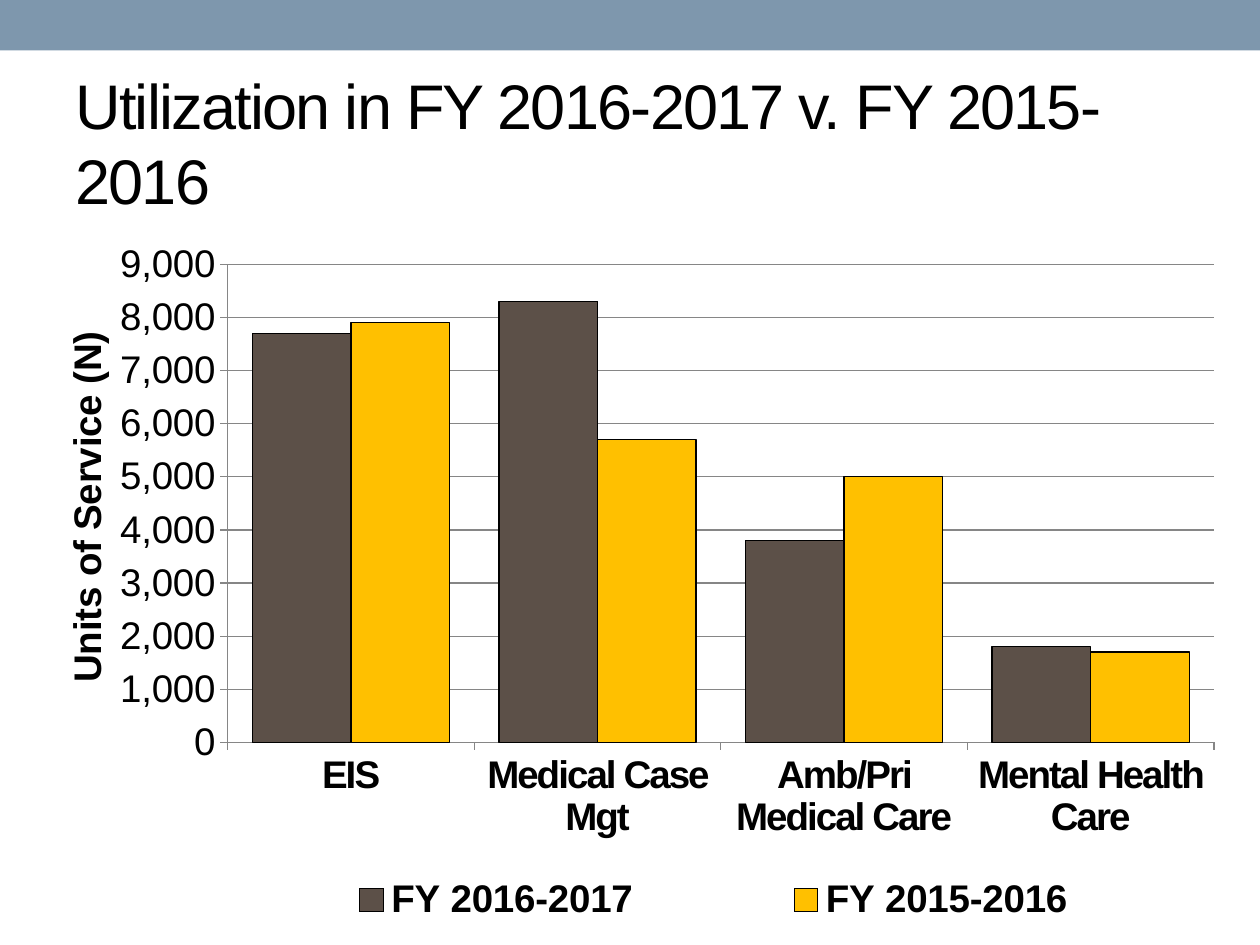
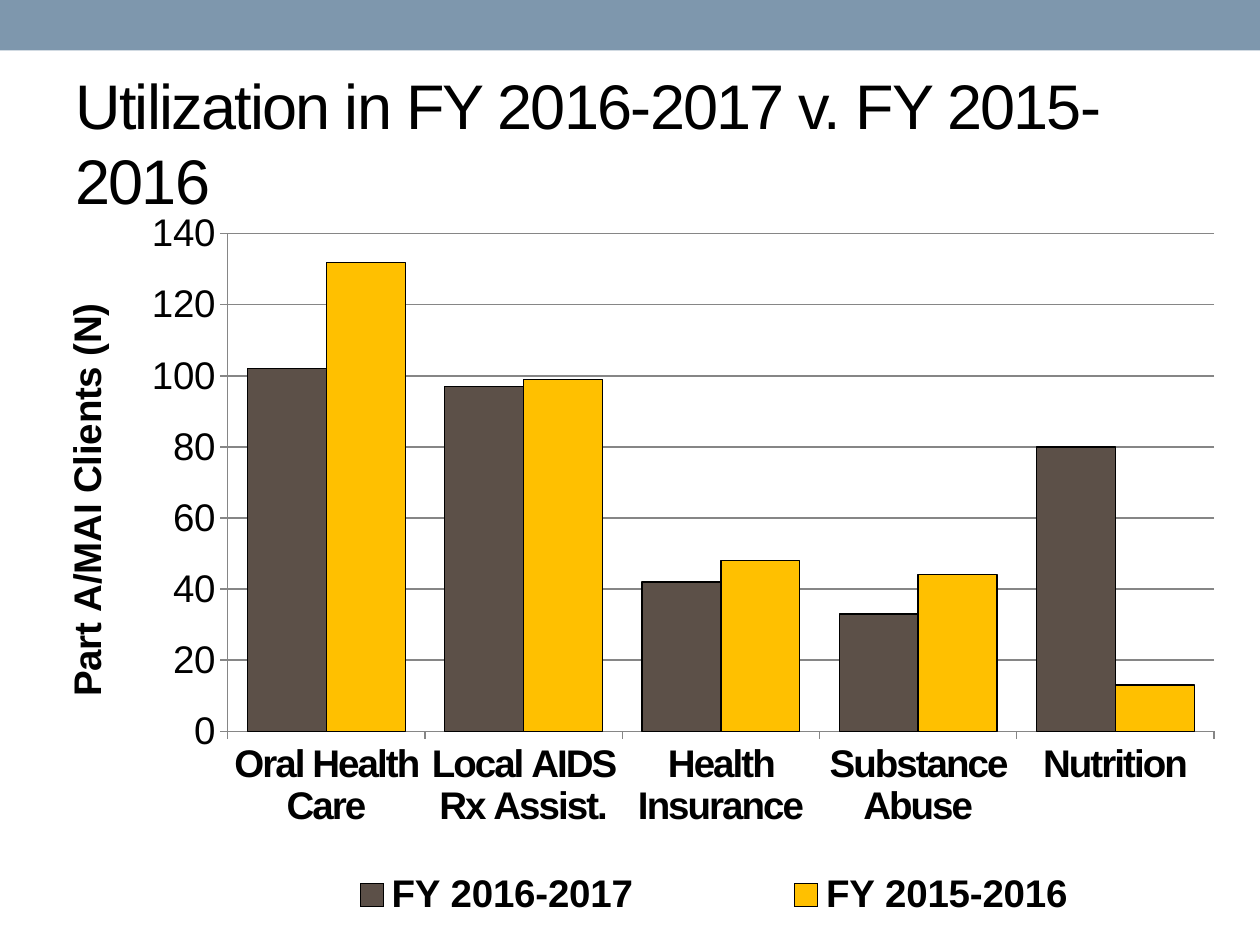
from dataclasses import dataclass

from lxml.etree import SubElement
from pptx import Presentation
from pptx.chart.data import CategoryChartData
from pptx.dml.color import RGBColor
from pptx.enum.chart import XL_CHART_TYPE as ChartType
from pptx.enum.chart import XL_LEGEND_POSITION as LegendPosition
from pptx.enum.chart import XL_TICK_MARK as TickMark
from pptx.enum.shapes import MSO_SHAPE as Preset
from pptx.enum.text import MSO_ANCHOR as Anchor
from pptx.oxml.ns import qn
from pptx.util import Pt


@dataclass(frozen=True)
class Theme:
    """Colours, font and type sizes that the slides share."""

    band: RGBColor = RGBColor(0x7E, 0x97, 0xAD)
    ink: RGBColor = RGBColor(0, 0, 0)
    grid: RGBColor = RGBColor(0x86, 0x86, 0x86)
    current_year: RGBColor = RGBColor(0x5C, 0x50, 0x48)
    previous_year: RGBColor = RGBColor(0xFF, 0xC0, 0x00)
    font: str = "Arial"
    title_size: float = 36
    chart_size: float = 22
    line_width: float = 0.75
    tracking: str = "-100"


@dataclass(frozen=True)
class Box:
    """A frame in points, or in fractions of a chart."""

    left: float
    top: float
    width: float
    height: float

    def points(self) -> tuple:
        """Return the four lengths as Pt values."""
        return Pt(self.left), Pt(self.top), Pt(self.width), Pt(self.height)


@dataclass(frozen=True)
class Utilization:
    """The figures of one slide, by service, for the two years."""

    frame: Box
    axis_label: str
    maximum: float
    step: float
    services: tuple
    current: tuple
    previous: tuple


THEME = Theme()
PAGE_WIDTH, PAGE_HEIGHT = 720, 540
BAND = Box(0, 0, PAGE_WIDTH, 28.8)
TITLE = Box(36, 42, 648, 78)
PLOT = Box(0.164, 0.033, 0.824, 0.69)
LEGEND = Box(0.15, 0.91, 0.84, 0.08)
AXIS_LABEL = (0.02, 0.12)
HEADING = "Utilization in FY 2016-2017 v. FY 2015-2016"

SLIDES = (
    Utilization(
        Box(18, 138, 684, 396), "Units of Service (N)", 9000, 1000,
        ("EIS", "Medical Case Mgt", "Amb/Pri Medical Care", "Mental Health Care"),
        (7700, 8300, 3800, 1800),
        (7900, 5700, 5000, 1700),
    ),
    Utilization(
        Box(18, 120, 684, 412), "Part A/MAI Clients (N)", 140, 20,
        ("Oral Health Care", "Local AIDS Rx Assist.", "Health Insurance",
         "Substance Abuse", "Nutrition"),
        (102, 97, 42, 33, 80),
        (132, 99, 48, 44, 13),
    ),
)


def style_font(font, size: float, bold: bool = False) -> None:
    """Give a font the shared face and ink."""
    font.name = THEME.font
    font.size = Pt(size)
    font.bold = bold
    font.color.rgb = THEME.ink


def style_line(line, color: RGBColor) -> None:
    """Give a line the shared width and a colour."""
    line.color.rgb = color
    line.width = Pt(THEME.line_width)


def place(element, index: int, **settings) -> None:
    """Fix the layout of a chart part by fractions of the chart."""
    for old in element.findall(qn("c:layout")):
        element.remove(old)
    layout = element.makeelement(qn("c:layout"))
    element.insert(index, layout)
    manual = SubElement(layout, qn("c:manualLayout"))
    for name, value in settings.items():
        SubElement(manual, qn(f"c:{name}")).set("val", str(value))


def place_box(element, index: int, box: Box, **target) -> None:
    """Fix both the position and the size of a chart part."""
    place(element, index, **target, xMode="edge", yMode="edge",
          x=box.left, y=box.top, w=box.width, h=box.height)


def add_band(page) -> None:
    """Draw the band across the top of the page."""
    band = page.shapes.add_shape(Preset.RECTANGLE, *BAND.points())
    band.shadow.inherit = False
    band.fill.solid()
    band.fill.fore_color.rgb = THEME.band
    band.line.fill.background()


def add_title(page) -> None:
    """Write the page title."""
    frame = page.shapes.add_textbox(*TITLE.points()).text_frame
    frame.word_wrap = True
    frame.vertical_anchor = Anchor.MIDDLE
    span = frame.paragraphs[0].add_run()
    span.text = HEADING
    style_font(span.font, THEME.title_size)
    span.font._element.set("spc", THEME.tracking)


def style_axes(chart, figures: Utilization) -> None:
    """Set the scale, labels and lines of both axes."""
    services, units = chart.category_axis, chart.value_axis
    for axis, bold in ((services, True), (units, False)):
        style_font(axis.tick_labels.font, THEME.chart_size, bold)
        style_line(axis.format.line, THEME.grid)
        axis.major_tick_mark = TickMark.OUTSIDE
        axis.minor_tick_mark = TickMark.NONE
    services.tick_labels.font._element.set("spc", THEME.tracking)
    units.minimum_scale = 0
    units.maximum_scale = figures.maximum
    units.major_unit = figures.step
    units.tick_labels.number_format = "#,##0"
    units.tick_labels.number_format_is_linked = False
    units.has_major_gridlines = True
    style_line(units.major_gridlines.format.line, THEME.grid)

    label = units.axis_title
    span = label.text_frame.paragraphs[0].add_run()
    span.text = figures.axis_label
    style_font(span.font, THEME.chart_size, True)
    body = label.text_frame._txBody.bodyPr
    body.set("rot", "-5400000")
    body.set("vert", "horz")
    left, top = AXIS_LABEL
    place(label._element, 1, xMode="edge", yMode="edge", x=left, y=top)


def add_utilization_chart(page, figures: Utilization) -> None:
    """Draw the two years side by side for each service."""
    data = CategoryChartData(number_format="#,##0")
    data.categories = figures.services
    data.add_series("FY 2016-2017", figures.current)
    data.add_series("FY 2015-2016", figures.previous)
    chart = page.shapes.add_chart(
        ChartType.COLUMN_CLUSTERED, *figures.frame.points(), data).chart
    style_font(chart.font, THEME.chart_size)
    chart.has_title = False

    plot = chart.plots[0]
    plot.gap_width = 50
    plot.overlap = 0
    plot.vary_by_categories = False
    for series, color in zip(plot.series, (THEME.current_year, THEME.previous_year)):
        series.format.fill.solid()
        series.format.fill.fore_color.rgb = color
        style_line(series.format.line, THEME.ink)

    style_axes(chart, figures)
    chart.has_legend = True
    chart.legend.position = LegendPosition.BOTTOM
    chart.legend.include_in_layout = False
    style_font(chart.legend.font, THEME.chart_size, True)
    place_box(chart.legend._element, 1, LEGEND)
    place_box(plot._element.getparent(), 0, PLOT, layoutTarget="inner")


def main() -> None:
    """Build and save the deck."""
    deck = Presentation()
    deck.slide_width, deck.slide_height = Pt(PAGE_WIDTH), Pt(PAGE_HEIGHT)
    for figures in SLIDES:
        page = deck.slides.add_slide(deck.slide_layouts[6])
        add_band(page)
        add_title(page)
        add_utilization_chart(page, figures)
    deck.save("out.pptx")


if __name__ == "__main__":
    main()
